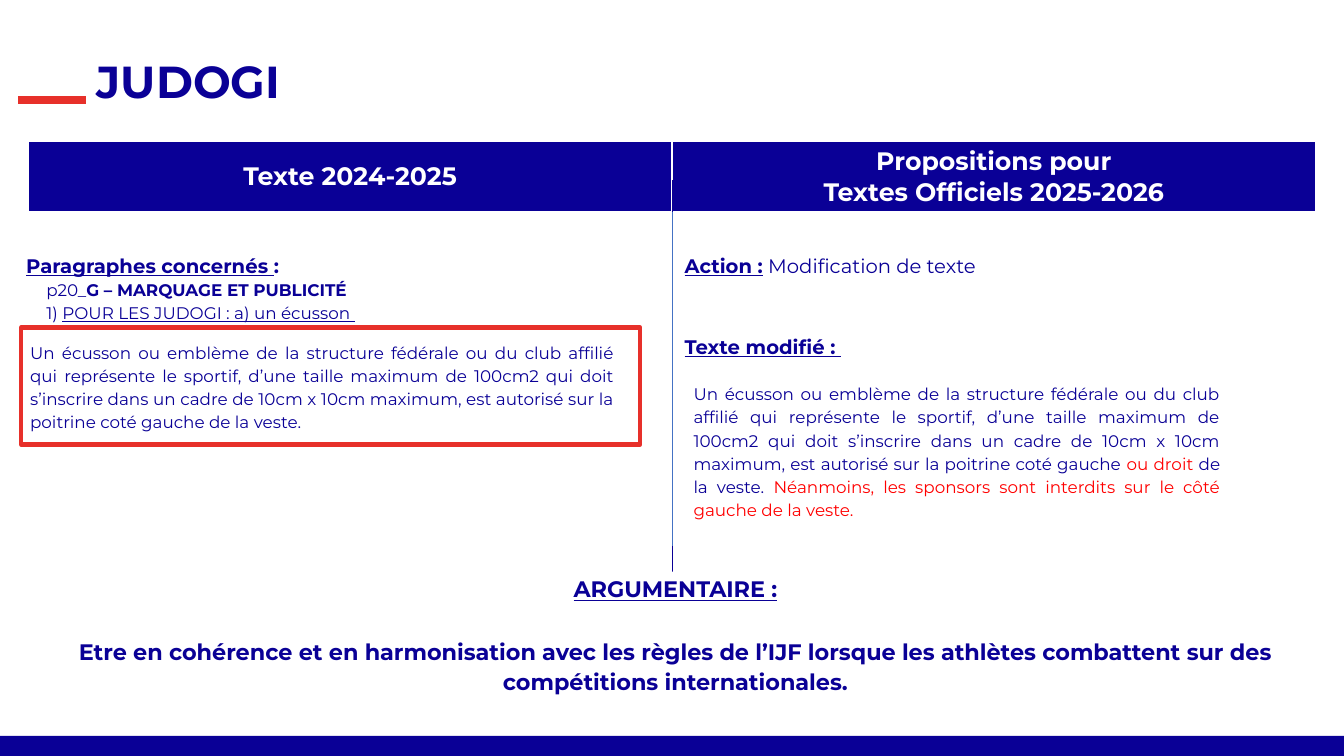
from lxml import etree
from pptx import Presentation
from pptx import util as u
from pptx.dml.color import RGBColor
from pptx.enum import shapes, text
from pptx.oxml.ns import qn

NAVY, RED, BRIGHT, BLUE, WHITE = "0A0096", "E7302A", "FF0000", "4472C4", "FFFFFF"
FONT = "Montserrat"
LEFT, MID, FULL = text.PP_ALIGN.LEFT, text.PP_ALIGN.CENTER, text.PP_ALIGN.JUSTIFY

RULE = (
    "Un écusson ou emblème de la structure fédérale ou du club affilié qui représente "
    "le sportif, d’une taille maximum de 100cm2 qui doit s’inscrire dans un cadre de "
    "10cm x 10cm maximum, est autorisé sur la poitrine coté gauche "
)
HEADS = ["Texte 2024-2025", "Propositions pour\nTextes Officiels 2025-2026"]
LINES = [
    ((6.67, 1.79), (6.67, 5.67), NAVY, 0.5),
    ((0.18, 0.99), (0.85, 0.99), RED, 6),
    ((6.67, 2.1), (6.67, 5.42), BLUE, 0.5),
]
TITLE = [dict(runs=[("JUDOGI", "b")], size=32, space=0.9)]
OLD = [
    dict(runs=[("Paragraphes concernés ", "bu"), (":", "b")], size=14),
    dict(runs=[("p20_", ""), ("G – MARQUAGE ET PUBLICITÉ", "b")], indent=0.2),
    dict(runs=[("1) ", ""), ("POUR LES JUDOGI : a) un écusson ", "u")], indent=0.2),
]
NEW = [
    dict(runs=[("Action :", "bu"), (" Modification de texte", "")], size=14),
    dict(runs=[("Texte modifié : ", "bu")], size=14, before=39),
]
WHY = [
    dict(runs=[("ARGUMENTAIRE :", "bu")], size=16, align=MID),
    dict(runs=[("Etre en cohérence et en harmonisation avec les règles de l’IJF lorsque "
                "les athlètes combattent sur des compétitions internationales.", "b")],
         size=16, align=MID, before=22.4),
]
OLD_RULE = [dict(runs=[(RULE + "de la veste.", "")], align=FULL)]
NEW_RULE = [dict(runs=[
    (RULE, ""), ("ou droit ", "r"), ("de la veste. ", ""),
    ("Néanmoins, les sponsors sont interdits sur le côté gauche de la veste.", "r"),
], align=FULL)]
BOXES = [
    ((0.86, 0.54, 12.47, 0.67), TITLE, True),
    ((0.26, 2.48, 5.88, 0.8), OLD, False),
    ((6.79, 2.48, 6.14, 1.2), NEW, False),
    ((0.2, 3.32, 5.99, 1.05), OLD_RULE, True),
    ((6.78, 3.73, 5.42, 1.5), NEW_RULE, True),
]


def color(code):
    return RGBColor.from_string(code)


def write(frame, paras, pad=False):
    frame.word_wrap = True
    frame.vertical_anchor = text.MSO_ANCHOR.TOP
    if not pad:
        frame.margin_left = frame.margin_right = 0
        frame.margin_top = frame.margin_bottom = 0
    for i, item in enumerate(paras):
        para = frame.add_paragraph() if i else frame.paragraphs[0]
        para.alignment = item.get("align", LEFT)
        para.line_spacing = item.get("space", 1.15)
        if "before" in item:
            para.space_before = u.Pt(item["before"])
        if "indent" in item:
            props = para._p.get_or_add_pPr()
            props.set("marL", str(u.Inches(item["indent"])))
            props.set("indent", "0")
        para.font.name = FONT
        para.font.size = u.Pt(item.get("size", 12))
        for words, marks in item["runs"]:
            run = para.add_run()
            run.text = words
            run.font.name = FONT
            run.font.size = para.font.size
            run.font.bold = "b" in marks
            run.font.underline = "u" in marks
            run.font.color.rgb = color(BRIGHT if "r" in marks else NAVY)


def rect(slide, place, fill=None, line=None):
    box = slide.shapes.add_shape(shapes.MSO_SHAPE.RECTANGLE, *map(u.Inches, place))
    box.shadow.inherit = False
    if fill:
        box.fill.solid()
        box.fill.fore_color.rgb = color(fill)
    else:
        box.fill.background()
    if line:
        box.line.color.rgb = color(line)
        box.line.width = u.Pt(3.25)
    else:
        box.line.fill.background()
    return box


def rule(slide, start, end, code, width):
    line = slide.shapes.add_connector(
        shapes.MSO_CONNECTOR.STRAIGHT, *map(u.Inches, start + end))
    line.line.color.rgb = color(code)
    line.line.width = u.Pt(width)
    etree.SubElement(line._element.spPr, qn("a:effectLst"))


def border(cell):
    props = cell._tc.get_or_add_tcPr()
    for i, (side, width) in enumerate([("L", 1), ("R", 1), ("T", 1), ("B", 3)]):
        edge = etree.Element(qn("a:ln" + side), w=str(u.Pt(width)))
        fill = etree.SubElement(edge, qn("a:solidFill"))
        etree.SubElement(fill, qn("a:srgbClr"), val=WHITE)
        props.insert(i, edge)


def header(slide):
    place = map(u.Inches, (0.28, 1.4, 12.77, 0.7))
    table = slide.shapes.add_table(1, len(HEADS), *place).table
    for cell, words in zip(table.rows[0].cells, HEADS):
        cell.fill.solid()
        cell.fill.fore_color.rgb = color(NAVY)
        cell.vertical_anchor = text.MSO_ANCHOR.MIDDLE
        cell.text = words
        for para in cell.text_frame.paragraphs:
            para.alignment = MID
            para.font.name = FONT
            para.font.size = u.Pt(18)
            para.font.bold = True
            para.font.color.rgb = color(WHITE)
        border(cell)


def main():
    deck = Presentation()
    deck.slide_width, deck.slide_height = u.Inches(13.33), u.Inches(7.5)
    slide = deck.slides.add_slide(deck.slide_layouts[6])
    rect(slide, (0, 7.3, 13.33, 0.2), fill=NAVY)
    rect(slide, (0.21, 3.25, 6.14, 1.16), line=RED)
    header(slide)
    for line in LINES:
        rule(slide, *line)
    why = rect(slide, (0.21, 5.67, 12.98, 1.16), fill=WHITE)
    write(why.text_frame, WHY)
    for place, paras, pad in BOXES:
        box = slide.shapes.add_textbox(*map(u.Inches, place))
        write(box.text_frame, paras, pad)
    deck.save("out.pptx")


if __name__ == "__main__":
    main()
